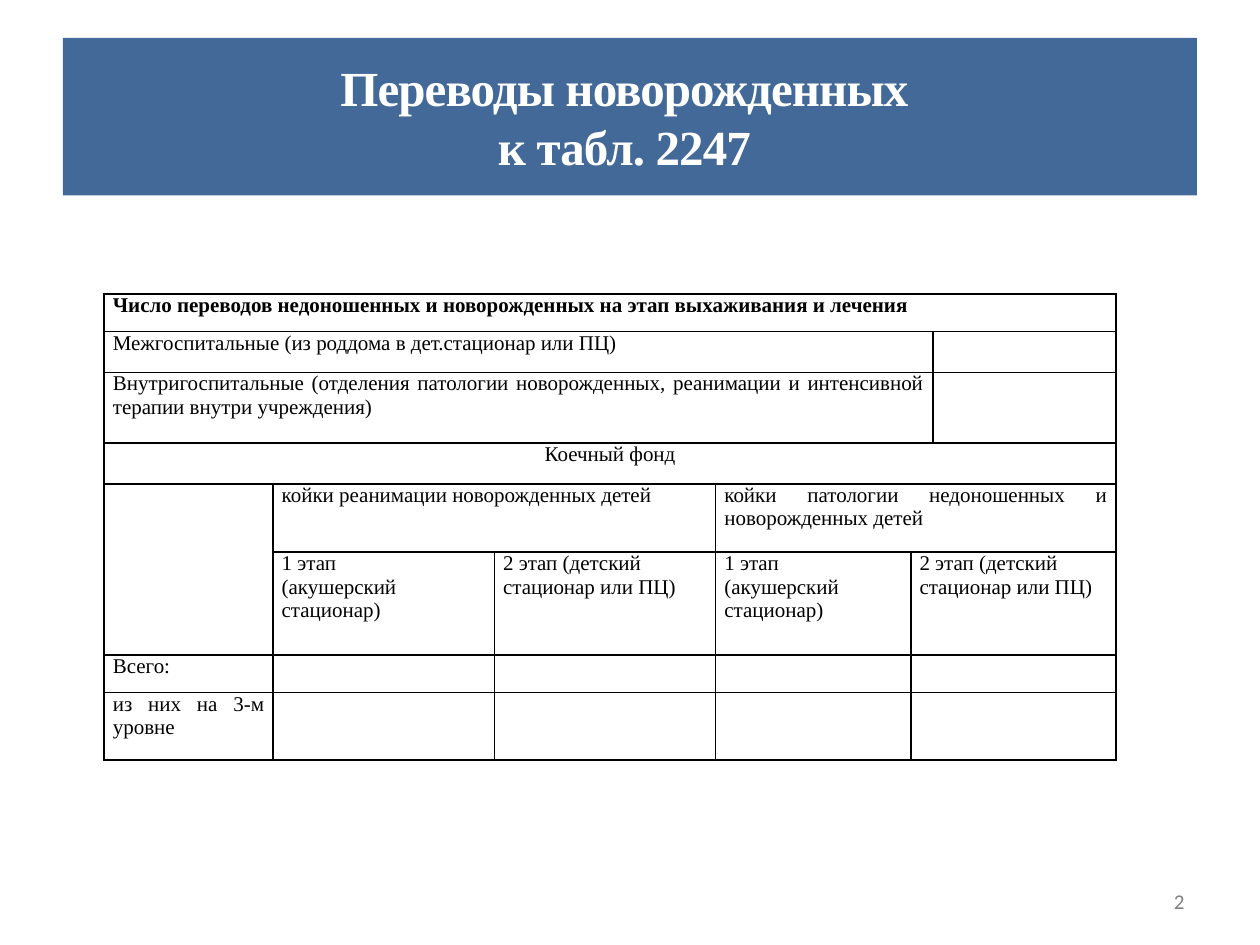
from lxml.etree import SubElement
from pptx import Presentation
from pptx.dml.color import RGBColor
from pptx.enum.shapes import MSO_SHAPE
from pptx.enum.text import MSO_ANCHOR, PP_ALIGN
from pptx.oxml.ns import qn
from pptx.util import Pt

# Content
COLORS = {"banner": "426997", "white": "FFFFFF", "black": "000000", "gray": "808080"}
TITLE = "Переводы новорожденных \vк табл. 2247 "
PAGE_NUMBER = "2"
LEFT, CENTER, RIGHT, JUSTIFY = (
    PP_ALIGN.LEFT, PP_ALIGN.CENTER, PP_ALIGN.RIGHT, PP_ALIGN.JUSTIFY)

COLUMN_WIDTHS = [96.5, 126.5, 126.5, 111.5, 9.5, 104.5]
ROW_HEIGHTS = [21.5, 23.25, 40.5, 23.25, 39, 58.75, 21.5, 38.75]
STAGE_ONE = "1 этап\n(акушерский\nстационар)"
STAGE_TWO = "2 этап (детский стационар или ПЦ)"

# (row, column): (text, alignment)
CELLS = {
    (0, 0): ("Число переводов недоношенных и новорожденных на этап выхаживания и лечения", JUSTIFY),
    (1, 0): ("Межгоспитальные (из роддома в дет.стационар или ПЦ) ", JUSTIFY),
    (2, 0): ("Внутригоспитальные (отделения патологии новорожденных, реанимации "
             "и интенсивной терапии внутри учреждения)", JUSTIFY),
    (3, 0): ("Коечный фонд", CENTER),
    (4, 1): ("койки реанимации новорожденных детей", LEFT),
    (4, 3): ("койки патологии недоношенных и новорожденных детей", JUSTIFY),
    (5, 1): (STAGE_ONE, LEFT),
    (5, 2): (STAGE_TWO, LEFT),
    (5, 3): (STAGE_ONE, LEFT),
    (5, 4): (STAGE_TWO, LEFT),
    (6, 0): ("Всего:", JUSTIFY),
    (7, 0): ("из них на 3-м уровне", JUSTIFY),
}
# First and last cell of each merged block
MERGES = [((0, 0), (0, 5)), ((1, 0), (1, 4)), ((2, 0), (2, 4)), ((3, 0), (3, 5)),
          ((4, 0), (5, 0)), ((4, 1), (4, 2)), ((4, 3), (4, 5)),
          ((5, 4), (5, 5)), ((6, 4), (6, 5)), ((7, 4), (7, 5))]


def color(name):
    return RGBColor.from_string(COLORS[name])


def write(frame, text, size=12, font="Times New Roman", ink="black", bold=False,
          align=LEFT, spacing=None):
    """Fill a text frame: newlines part paragraphs, vertical tabs break lines."""
    for index, content in enumerate(text.split("\n")):
        para = frame.paragraphs[0] if index == 0 else frame.add_paragraph()
        para.alignment = align
        for line, words in enumerate(content.split("\v")):
            if line:
                para.add_line_break()
            if not words:
                continue
            span = para.add_run()
            span.text = words
            span.font.size, span.font.name, span.font.bold = Pt(size), font, bold
            span.font.color.rgb = color(ink)
            if spacing is not None:
                span.font._element.set("spc", str(round(spacing * 100)))
        if not content:  # keeps an empty cell from growing
            SubElement(para._p, qn("a:endParaRPr"), sz=str(size * 100))


def add_borders(cell, width=1):
    properties = cell._tc.get_or_add_tcPr()
    for position, side in enumerate(("lnL", "lnR", "lnT", "lnB")):
        line = SubElement(properties, qn(f"a:{side}"), w=str(Pt(width)))
        fill = SubElement(line, qn("a:solidFill"))
        SubElement(fill, qn("a:srgbClr"), val=COLORS["black"])
        properties.insert(position, line)


deck = Presentation()
deck.slide_width, deck.slide_height = Pt(720), Pt(540)
page = deck.slides.add_slide(deck.slide_layouts[6])

# Title banner
banner = page.shapes.add_shape(MSO_SHAPE.RECTANGLE, Pt(36), Pt(21.6), Pt(648), Pt(90))
banner.shadow.inherit = False
banner.fill.solid()
banner.fill.fore_color.rgb = color("banner")
banner.line.fill.background()
banner.text_frame.word_wrap = True
banner.text_frame.vertical_anchor = MSO_ANCHOR.MIDDLE
write(banner.text_frame, TITLE, size=28, ink="white", bold=True, align=CENTER, spacing=-0.5)

# Page number
box = page.shapes.add_textbox(Pt(516), Pt(500.5), Pt(168), Pt(28.75))
box.text_frame.word_wrap = True
box.text_frame.vertical_anchor = MSO_ANCHOR.MIDDLE
write(box.text_frame, PAGE_NUMBER, font="Calibri", ink="gray", align=RIGHT)

# Table grid
table = page.shapes.add_table(
    len(ROW_HEIGHTS), len(COLUMN_WIDTHS), Pt(59.5), Pt(168),
    Pt(sum(COLUMN_WIDTHS)), Pt(sum(ROW_HEIGHTS))).table
table.first_row = table.horz_banding = False
for column, width in zip(table.columns, COLUMN_WIDTHS):
    column.width = Pt(width)
for row, height in zip(table.rows, ROW_HEIGHTS):
    row.height = Pt(height)

# Table cells
for row in range(len(ROW_HEIGHTS)):
    for column in range(len(COLUMN_WIDTHS)):
        cell = table.cell(row, column)
        cell.margin_left = cell.margin_right = Pt(5)
        cell.margin_top = cell.margin_bottom = 0
        cell.fill.background()
        add_borders(cell)
        text, align = CELLS.get((row, column), ("", LEFT))
        write(cell.text_frame, text, bold=row == 0, align=align)
for first, last in MERGES:
    table.cell(*first).merge(table.cell(*last))

deck.save("out.pptx")
